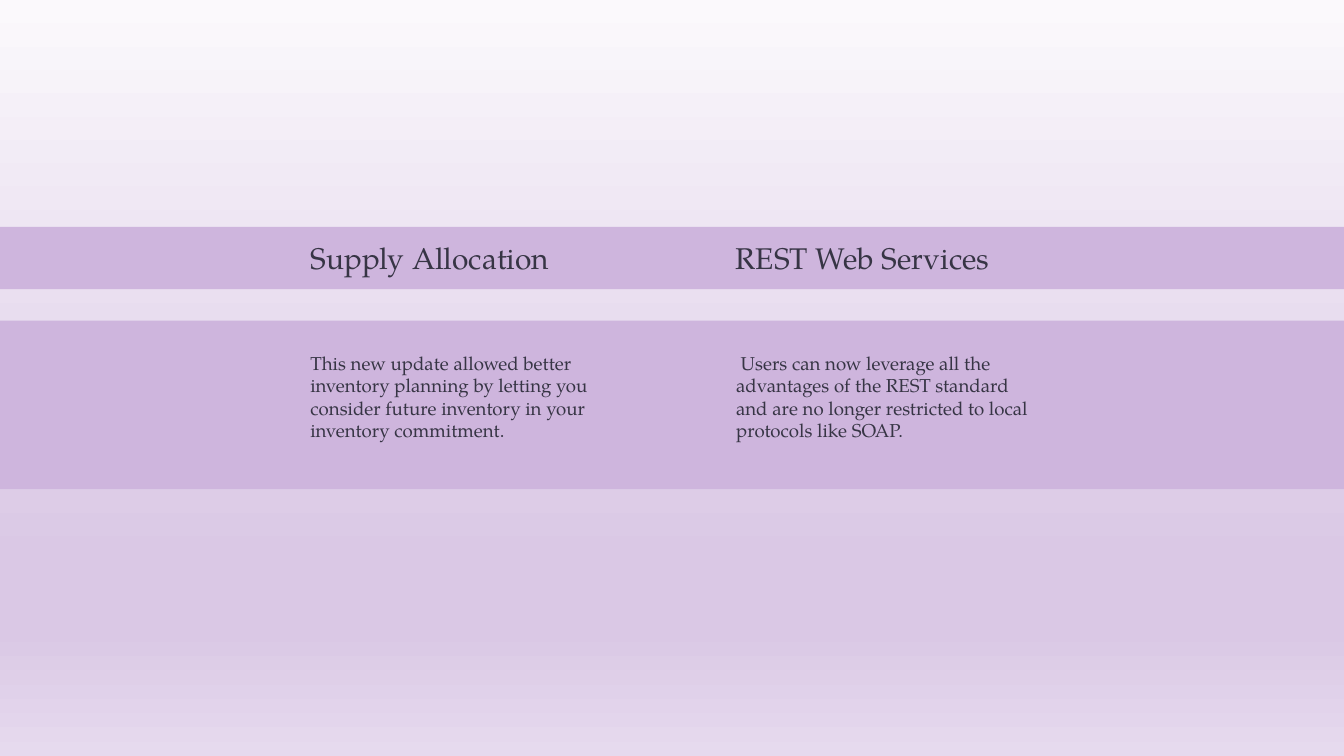
"""Build a slide with two release notes set on lilac bands."""
from copy import deepcopy
from dataclasses import dataclass

from pptx import Presentation
from pptx.dml.color import RGBColor
from pptx.enum.shapes import MSO_SHAPE
from pptx.enum.text import MSO_ANCHOR
from pptx.oxml.ns import qn
from pptx.util import Emu, Pt

PX = 9525
WIDE, HIGH = 1920, 1080


@dataclass(frozen=True)
class Theme:
    font: str = "TeX Gyre Pagella"
    ink: str = "373545"
    band: str = "CEB5DD"
    fade: tuple = ((0, "FBF9FC"), (74, "DAC8E5"), (83, "DAC8E5"), (100, "E6DAEE"))
    head: int = 32
    body: int = 20


class Page:
    def __init__(self, slide, theme):
        self.slide = slide
        self.theme = theme

    def rect(self, *box):
        shape = self.slide.shapes.add_shape(MSO_SHAPE.RECTANGLE, *(Emu(n * PX) for n in box))
        shape.shadow.inherit = False
        shape.line.fill.background()
        return shape

    def band(self, top, high):
        fill = self.rect(0, top, WIDE, high).fill
        fill.solid()
        fill.fore_color.rgb = RGBColor.from_string(self.theme.band)

    def fade(self):
        shape = self.rect(0, 0, WIDE, HIGH)
        fill = shape.fill
        fill.gradient()
        fill.gradient_angle = 270
        stops = next(shape.element.iter(qn("a:gsLst")))
        while len(stops) < len(self.theme.fade):
            stops.append(deepcopy(stops[0]))
        for stop, (place, color) in zip(fill.gradient_stops, self.theme.fade):
            stop.position = place / 100
            stop.color.rgb = RGBColor.from_string(color)

    def text(self, words, size, *box):
        frame = self.slide.shapes.add_textbox(*(Emu(n * PX) for n in box)).text_frame
        frame.word_wrap = True
        frame.vertical_anchor = MSO_ANCHOR.MIDDLE
        run = frame.paragraphs[0].add_run()
        run.text = words
        run.font.name = self.theme.font
        run.font.size = Pt(size)
        run.font.color.rgb = RGBColor.from_string(self.theme.ink)


def main():
    deck = Presentation()
    deck.slide_width, deck.slide_height = Emu(WIDE * PX), Emu(HIGH * PX)
    theme = Theme()
    page = Page(deck.slides.add_slide(deck.slide_layouts[6]), theme)
    page.fade()
    page.band(458, 241)
    page.band(324, 89)
    notes = (
        (434, 459, "Supply Allocation",
         "This new update allowed better inventory planning by letting you "
         "consider future inventory in your inventory commitment."),
        (1042, 438, "REST Web Services",
         " Users can now leverage all the advantages of the REST standard "
         "and are no longer restricted to local protocols like SOAP."),
    )
    for left, wide, head, body in notes:
        page.text(head, theme.head, left, 338, 441, 61)
        page.text(body, theme.body, left, 497, wide, 139)
    deck.save("out.pptx")


if __name__ == "__main__":
    main()
